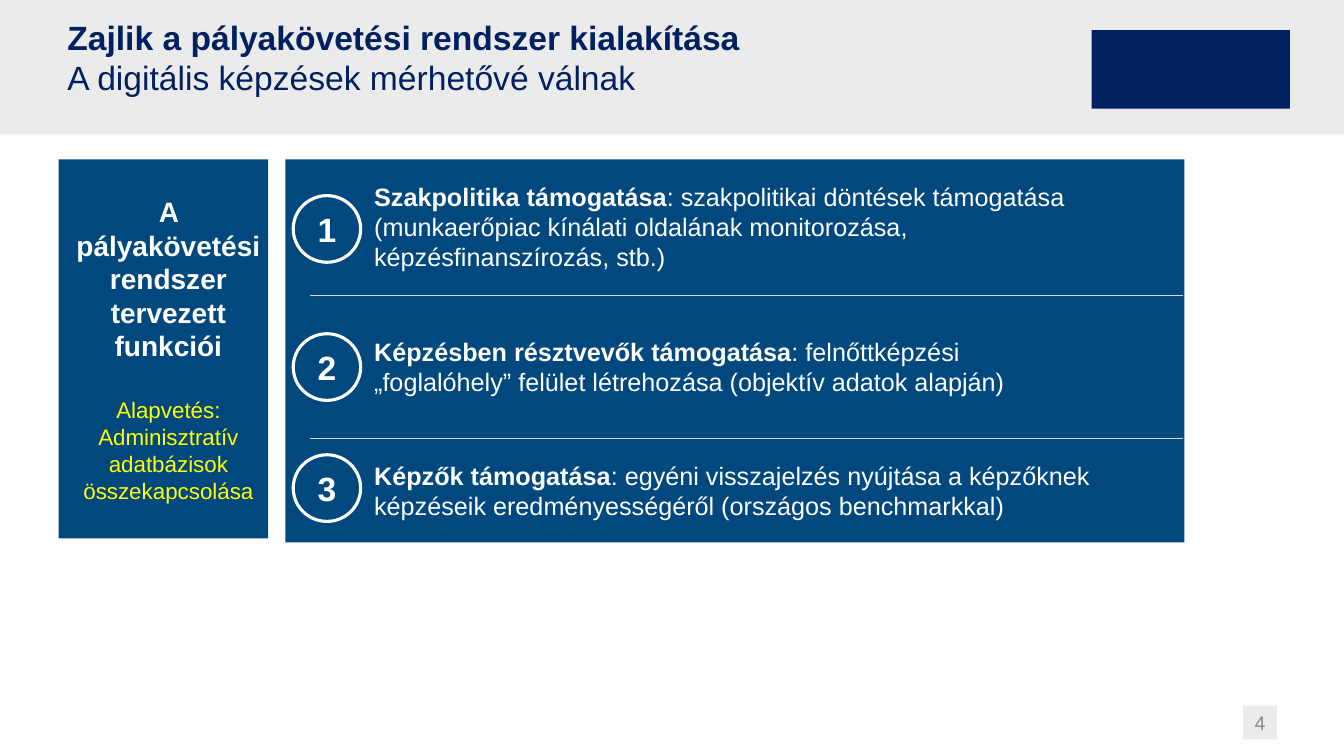
"""Build the slide on the planned functions of the career tracking system."""
from dataclasses import dataclass
from typing import Optional

from lxml import etree
from pptx import Presentation
from pptx import util as u
from pptx.dml.color import RGBColor
from pptx.enum import shapes, text
from pptx.oxml import ns

FONT = "Arial"
NAVY = RGBColor(0x00, 0x20, 0x60)
BLUE = RGBColor(0x00, 0x48, 0x7E)
LIGHT_GREY = RGBColor(0xEB, 0xEB, 0xEB)
LINE_GREY = RGBColor(0xD9, 0xD9, 0xD9)
NUMBER_GREY = RGBColor(0x8C, 0x8C, 0x8C)
WHITE = RGBColor(0xFF, 0xFF, 0xFF)
YELLOW = RGBColor(0xFF, 0xFF, 0x00)
LEFT, CENTER = text.PP_ALIGN.LEFT, text.PP_ALIGN.CENTER
TOP, MIDDLE = text.MSO_ANCHOR.TOP, text.MSO_ANCHOR.MIDDLE
RECTANGLE, OVAL = shapes.MSO_SHAPE.RECTANGLE, shapes.MSO_SHAPE.OVAL
LINE_PITCH = 1.2


@dataclass
class Phrase:
    words: str
    bold: bool = False


@dataclass
class Paragraph:
    phrases: list[Phrase]
    size: float
    color: RGBColor
    align: text.PP_ALIGN = CENTER
    indent: float = 0
    before: float = 0


@dataclass
class Box:
    left: float
    top: float
    width: float
    height: float
    fill: Optional[RGBColor] = None
    paragraphs: tuple[Paragraph, ...] = ()
    anchor: text.MSO_ANCHOR = MIDDLE
    kind: shapes.MSO_SHAPE = RECTANGLE
    outline: Optional[RGBColor] = None


@dataclass
class Topic:
    heading: str
    detail: str
    circle_top: float


def apply(target, values: dict) -> None:
    """Set every attribute named in the format values."""
    for name, value in values.items():
        setattr(target, name, value)


def write(frame, box: Box) -> None:
    """Fill a text frame with the paragraphs of a box."""
    apply(frame, dict(word_wrap=True, vertical_anchor=box.anchor, margin_left=0,
                      margin_right=0, margin_top=0, margin_bottom=0))
    for index, content in enumerate(box.paragraphs):
        paragraph = frame.add_paragraph() if index else frame.paragraphs[0]
        properties = paragraph._p.get_or_add_pPr()
        properties.set("marL", str(u.Cm(content.indent)))
        properties.set("indent", "0")
        apply(paragraph, dict(alignment=content.align,
                              line_spacing=u.Pt(LINE_PITCH * content.size),
                              space_before=u.Pt(content.before)))
        for phrase in content.phrases:
            if phrase.words == "\n":
                paragraph.add_line_break()
                continue
            run = paragraph.add_run()
            run.text = phrase.words
            apply(run.font, dict(name=FONT, size=u.Pt(content.size), bold=phrase.bold))
            run.font.color.rgb = content.color


def add_box(slide, box: Box) -> None:
    """Draw a box as a filled shape, or as a text box when it has no fill."""
    place = [u.Cm(n) for n in (box.left, box.top, box.width, box.height)]
    if box.fill is None:
        shape = slide.shapes.add_textbox(*place)
    else:
        shape = slide.shapes.add_shape(box.kind, *place)
        shape.shadow.inherit = False
        shape.fill.solid()
        shape.fill.fore_color.rgb = box.fill
        if box.outline is None:
            shape.line.fill.background()
        else:
            shape.line.color.rgb = box.outline
            shape.line.width = u.Pt(2.25)
    write(shape.text_frame, box)


def add_divider(slide, top: float) -> None:
    """Draw a thin horizontal line between two topics."""
    divider = slide.shapes.add_connector(
        shapes.MSO_CONNECTOR.STRAIGHT, u.Cm(7.82), u.Cm(top), u.Cm(29.82), u.Cm(top))
    divider.line.color.rgb = LINE_GREY
    divider.line.width = u.Pt(0.75)
    etree.SubElement(divider._element.spPr, ns.qn("a:effectLst"))


TOPICS = [
    Topic("Szakpolitika támogatása",
          ": szakpolitikai döntések támogatása (munkaerőpiac kínálati oldalának "
          "monitorozása, képzésfinanszírozás, stb.)", 4.93),
    Topic("Képzésben résztvevők támogatása",
          ": felnőttképzési „foglalóhely” felület létrehozása "
          "(objektív adatok alapján)", 8.41),
    Topic("Képzők támogatása",
          ": egyéni visszajelzés nyújtása a képzőknek képzéseik "
          "eredményességéről (országos benchmarkkal)", 11.46),
]
TITLE = Paragraph([Phrase("Zajlik a pályakövetési rendszer kialakítása", True), Phrase("\n"),
                   Phrase("A digitális képzések mérhetővé válnak")], 24, NAVY, LEFT)
SIDE_TEXT = (
    Paragraph([Phrase("A pályakövetési rendszer tervezett funkciói", True)], 20, WHITE,
              indent=0.25),
    Paragraph([Phrase("Alapvetés:")], 16, YELLOW, indent=0.25, before=24),
    Paragraph([Phrase("Adminisztratív adatbázisok összekapcsolása")], 16, YELLOW, indent=0.25),
)
TOPIC_TEXT = tuple(
    Paragraph([Phrase(topic.heading, True), Phrase(topic.detail)], 18, WHITE, LEFT, 2.24,
              45.6 if index else 0)
    for index, topic in enumerate(TOPICS))
BOXES = [
    Box(0, 0, 33.87, 3.39, LIGHT_GREY),
    Box(31.33, 17.78, 0.85, 0.85, LIGHT_GREY,
        (Paragraph([Phrase("4")], 14, NUMBER_GREY),)),
    Box(7.19, 4.02, 22.66, 9.65, BLUE),
    Box(1.7, 0.43, 25.83, 2.54, None, (TITLE,), TOP),
    Box(27.51, 0.76, 5, 1.98, NAVY),
    Box(1.48, 4.02, 5.28, 9.55, BLUE, SIDE_TEXT),
    Box(7.19, 4.02, 20.52, 9.65, None, TOPIC_TEXT),
    *(Box(7.39, topic.circle_top, 1.7, 1.68, BLUE,
          (Paragraph([Phrase(str(number), True)], 24, WHITE),), kind=OVAL, outline=WHITE)
      for number, topic in enumerate(TOPICS, 1)),
]


def main() -> None:
    """Build and save the presentation."""
    presentation = Presentation()
    apply(presentation, dict(slide_width=u.Cm(33.87), slide_height=u.Cm(19.05)))
    slide = presentation.slides.add_slide(presentation.slide_layouts[6])
    for box in BOXES:
        add_box(slide, box)
    for top in (7.44, 11.05):
        add_divider(slide, top)
    presentation.save("out.pptx")


if __name__ == "__main__":
    main()
